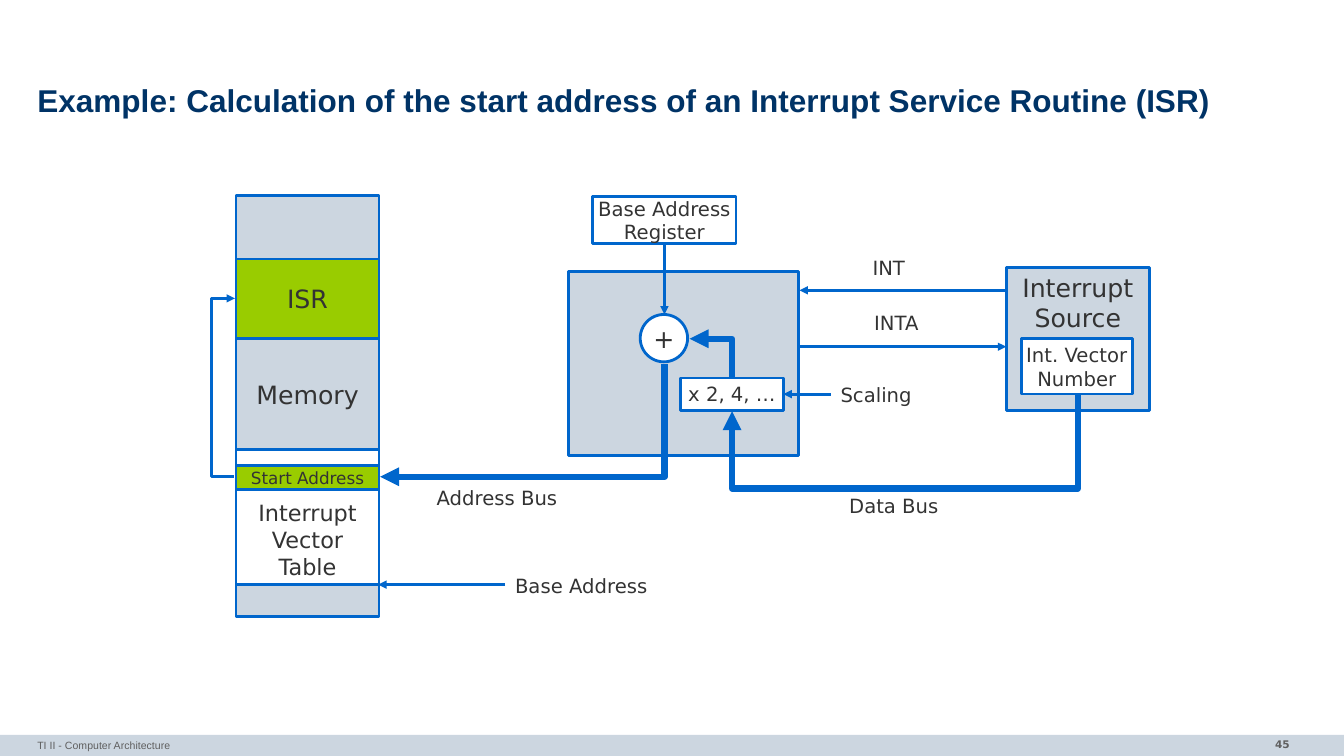
"""Build the slide on calculating the start address of an interrupt service routine."""
from lxml.etree import SubElement
from pptx import Presentation
from pptx.dml.color import RGBColor
from pptx.enum.shapes import MSO_CONNECTOR, MSO_SHAPE
from pptx.enum.text import MSO_ANCHOR, PP_ALIGN
from pptx.oxml.ns import qn
from pptx.util import Inches, Pt

COLORS = {"blue": "0066CC", "gray": "CCD6E0", "green": "99CC00", "white": "FFFFFF",
          "text": "333333", "title": "003366", "footer": "5F5F5F"}
BODY_FONT, HEAD_FONT = "DejaVu Sans", "Arial"
MIDDLE, TOP, BOTTOM = MSO_ANCHOR.MIDDLE, MSO_ANCHOR.TOP, MSO_ANCHOR.BOTTOM
RECT, CIRCLE = MSO_SHAPE.RECTANGLE, MSO_SHAPE.OVAL

TITLE = "Example: Calculation of the start address of an Interrupt Service Routine (ISR)"
FOOTER = "TI II - Computer Architecture"
PAGE_NUMBER = "45"

MEMORY_LEFT, MEMORY_TOP, MEMORY_WIDTH = 2.34, 1.94, 1.42
MEMORY = [
    (0.63, "gray", "", 18, MIDDLE),
    (0.79, "green", "ISR", 18, MIDDLE),
    (1.1, "gray", "Memory", 18, MIDDLE),
    (1.34, None, "Interrupt\nVector\nTable", 16, BOTTOM),
    (0.32, "gray", "", 18, MIDDLE),
]
BLOCKS = [
    (RECT, (2.34, 4.62, 1.42, 0.24), "green", "Start Address", 12, MIDDLE),
    (RECT, (5.64, 2.69, 2.28, 1.83), "gray", "", 18, MIDDLE),
    (RECT, (9.98, 2.65, 1.42, 1.42), "gray", "Interrupt\nSource", 18, TOP),
    (RECT, (10.13, 3.36, 1.1, 0.55), "white", "Int. Vector\nNumber", 14, MIDDLE),
    (RECT, (6.75, 3.75, 1.02, 0.32), "white", "x 2, 4, …", 14, MIDDLE),
    (CIRCLE, (6.35, 3.12, 0.47, 0.47), "white", "+", 18, MIDDLE),
    (RECT, (5.88, 1.95, 1.42, 0.47), "white", "Base Address\nRegister", 14, MIDDLE),
]
LABELS = [
    ("Base Address", 5.01, 5.64, 1.51),
    ("Scaling", 8.24, 3.75, 0.9),
    ("Data Bus", 8.32, 4.85, 1.09),
    ("INT", 8.54, 2.49, 0.55),
    ("INTA", 8.55, 3.04, 0.68),
    ("Address Bus", 4.23, 4.77, 1.4),
]
STRAIGHT_ARROWS = [
    ((5.01, 5.8), (3.75, 5.8)),
    ((8.24, 3.91), (7.77, 3.91)),
    ((9.98, 2.88), (7.93, 2.88)),
    ((7.93, 3.44), (9.98, 3.44)),
    ((6.59, 2.42), (6.59, 3.12)),
]
BENT_ARROWS = [
    ((2.32, 4.73), (2.33, 2.96), 2, 180, "bentConnector3", -23),
    ((10.69, 3.92), (7.26, 4.08), 4.5, 90, "bentConnector3", 5.8),
    ((7.26, 3.74), (6.84, 3.36), 4.5, 90, "bentConnector2", None),
    ((6.59, 3.61), (3.77, 4.73), 4.5, 90, "bentConnector2", None),
]


def rgb(name):
    return RGBColor.from_string(COLORS[name])


def write(box, text, size, color="text", font=BODY_FONT, bold=False,
          align=PP_ALIGN.CENTER, spacing=None, **frame_format):
    frame = box.text_frame
    for name, value in frame_format.items():
        setattr(frame, name, value)
    for index, line in enumerate(text.split("\n")):
        para = frame.add_paragraph() if index else frame.paragraphs[0]
        para.alignment = align
        if spacing:
            para.line_spacing = spacing
        span = para.add_run()
        span.text = line
        for name, value in {"size": Pt(size), "name": font, "bold": bold}.items():
            setattr(span.font, name, value)
        span.font.color.rgb = rgb(color)


def add_text(page, place, text, size, **text_format):
    box = page.shapes.add_textbox(*map(Inches, place))
    write(box, text, size, word_wrap=True, **text_format)


def add_block(page, kind, place, fill, text="", size=18, anchor=MIDDLE, outlined=True):
    block = page.shapes.add_shape(kind, *map(Inches, place))
    block.shadow.inherit = False
    if fill:
        block.fill.solid()
        block.fill.fore_color.rgb = rgb(fill)
    else:
        block.fill.background()
    if outlined:
        block.line.color.rgb = rgb("blue")
        block.line.width = Pt(2)
    else:
        block.line.fill.background()
    if text:
        write(block, text, size, vertical_anchor=anchor, word_wrap=False)


def add_arrow(page, kind, start, end, width=2):
    arrow = page.shapes.add_connector(kind, *map(Inches, start + end))
    arrow.line.color.rgb = rgb("blue")
    arrow.line.width = Pt(width)
    SubElement(arrow.line._get_or_add_ln(), qn("a:tailEnd"), type="triangle")
    SubElement(arrow._element.spPr, qn("a:effectLst"))
    return arrow


def add_bent_arrow(page, start, end, width, turn, preset, bend):
    across, down = abs(end[0] - start[0]), abs(end[1] - start[1])
    wide, high = (down, across) if turn == 90 else (across, down)
    left = (start[0] + end[0] - wide) / 2
    top = (start[1] + end[1] - high) / 2
    arrow = add_arrow(page, MSO_CONNECTOR.ELBOW, (left, top), (left + wide, top + high), width)
    frame = arrow._element.spPr.find(qn("a:xfrm"))
    frame.set("rot", str(turn * 60000))
    if end[1] < start[1]:
        frame.set("flipH", "1")
    geometry = arrow._element.spPr.find(qn("a:prstGeom"))
    geometry.set("prst", preset)
    if bend is not None:
        guides = geometry.find(qn("a:avLst"))
        SubElement(guides, qn("a:gd"), name="adj1", fmla=f"val {round(bend * 100000)}")


def main():
    deck = Presentation()
    deck.slide_width, deck.slide_height = Inches(13.33), Inches(7.5)
    page = deck.slides.add_slide(deck.slide_layouts[6])

    add_block(page, RECT, (0, 7.29, 13.33, 0.21), "gray", outlined=False)
    add_text(page, (11.1, 7.27, 1.79, 0.26), PAGE_NUMBER, 7.5, color="footer",
             bold=True, align=PP_ALIGN.RIGHT)
    add_text(page, (0.37, 0.79, 12.6, 0.47), TITLE, 22.5, color="title", font=HEAD_FONT,
             bold=True, align=PP_ALIGN.LEFT, spacing=0.85, vertical_anchor=MIDDLE,
             margin_left=0, margin_right=0, margin_top=0, margin_bottom=0)
    add_text(page, (0.37, 7.28, 8.72, 0.25), FOOTER, 7.5, color="footer", font=HEAD_FONT,
             align=PP_ALIGN.LEFT, margin_left=0, margin_right=0)

    top = MEMORY_TOP
    for height, *look in MEMORY:
        add_block(page, RECT, (MEMORY_LEFT, top, MEMORY_WIDTH, height), *look)
        top += height
    for block in BLOCKS:
        add_block(page, *block)
    for start, end in STRAIGHT_ARROWS:
        add_arrow(page, MSO_CONNECTOR.STRAIGHT, start, end)
    for bent_arrow in BENT_ARROWS:
        add_bent_arrow(page, *bent_arrow)
    for text, left, label_top, width in LABELS:
        add_text(page, (left, label_top, width, 0.33), text, 14,
                 margin_left=0, margin_right=0)

    deck.save("out.pptx")


if __name__ == "__main__":
    main()
